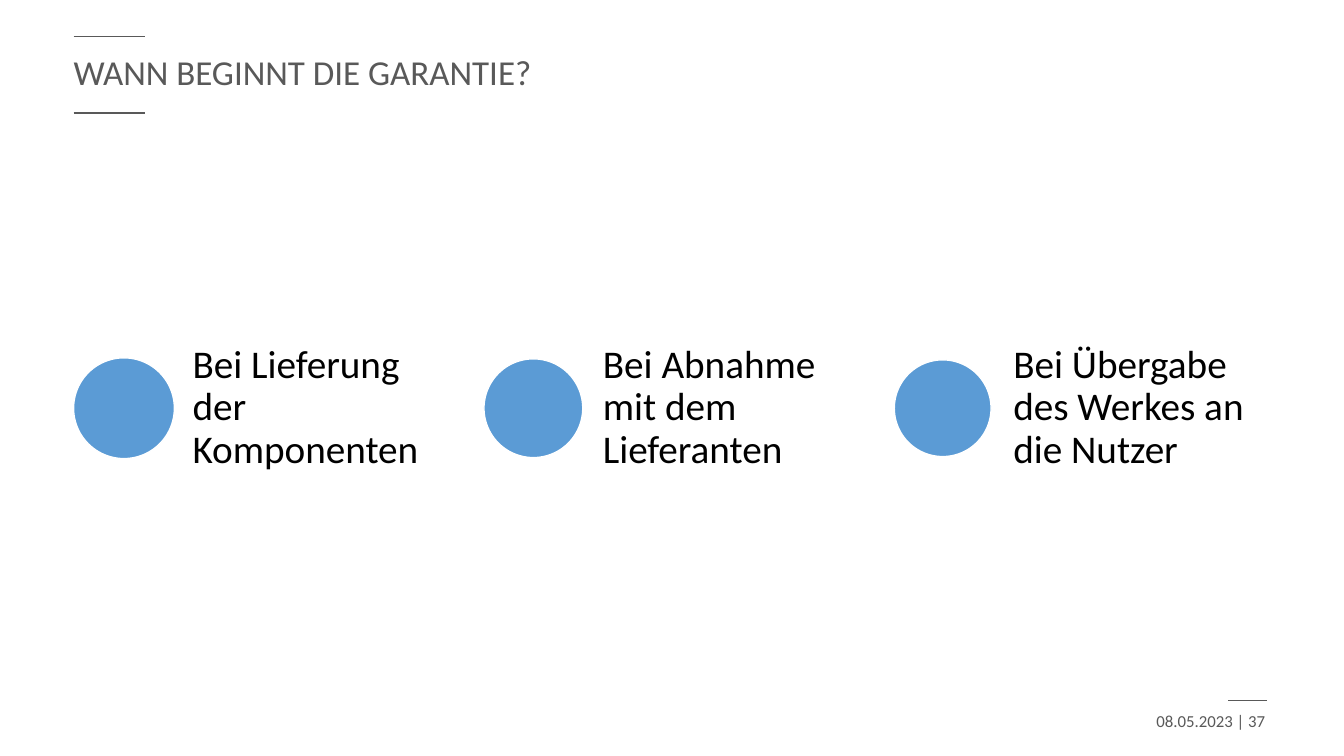
from pptx import Presentation
from pptx.dml.color import RGBColor
from pptx.enum.shapes import MSO_CONNECTOR as Connector, MSO_SHAPE as Shape
from pptx.enum.text import MSO_ANCHOR as Anchor, MSO_AUTO_SIZE as AutoSize, PP_ALIGN as Align
from pptx.oxml.ns import qn
from pptx.util import Inches, Pt
from lxml import etree

COLORS = {"gray": "595959", "blue": "5B9BD5", "white": "FFFFFF", "black": "000000"}
ANSWERS = [
    ("Bei Lieferung der Komponenten", 1.0, 2.63),
    ("Bei Abnahme mit dem Lieferanten", 0.98, 2.63),
    ("Bei Übergabe des Werkes an die Nutzer", 0.96, 2.59),
]
LEFT = 0.73
PITCH = 4.07
MIDDLE = 4.05
TEXT_OFFSET = 1.06
TEXT_HEIGHT = 1.5


def color(name):
    return RGBColor.from_string(COLORS[name])


def apply_format(target, values):
    for name, value in values.items():
        setattr(target, name, value)


class SlideBuilder:
    font_name = "Calibri"

    def __init__(self, presentation):
        self.slide = presentation.slides.add_slide(presentation.slide_layouts[5])

    def fill_text(self, shape, text, size, color_name,
                  align=Align.LEFT, spacing=1.0, inset=(0.1, 0.05)):
        horizontal, vertical = map(Inches, inset)
        frame = shape.text_frame
        frame.text = text
        apply_format(frame, {
            "word_wrap": True, "auto_size": AutoSize.NONE, "vertical_anchor": Anchor.MIDDLE,
            "margin_left": horizontal, "margin_right": horizontal,
            "margin_top": vertical, "margin_bottom": vertical,
        })
        paragraph = frame.paragraphs[0]
        apply_format(paragraph, {
            "alignment": align, "line_spacing": spacing, "space_before": Pt(0),
        })
        font = paragraph.runs[0].font
        apply_format(font, {"name": self.font_name, "size": Pt(size)})
        font.color.rgb = color(color_name)

    def title(self, text, left, top, width, height):
        shape = self.slide.shapes.title
        apply_format(shape, {
            "left": Inches(left), "top": Inches(top),
            "width": Inches(width), "height": Inches(height),
        })
        self.fill_text(shape, text, 25, "gray", spacing=0.9)

    def text(self, text, left, top, width, height, size, color_name, **style):
        box = self.slide.shapes.add_textbox(*map(Inches, (left, top, width, height)))
        self.fill_text(box, text, size, color_name, **style)

    def rule(self, left, right, y):
        line = self.slide.shapes.add_connector(
            Connector.STRAIGHT, *map(Inches, (left, y, right, y)))
        line.line.color.rgb = color("gray")
        line.line.width = Pt(1)
        etree.SubElement(line._element.spPr, qn("a:effectLst"))

    def circle(self, left, top, diameter):
        shape = self.slide.shapes.add_shape(
            Shape.OVAL, *map(Inches, (left, top, diameter, diameter)))
        shape.shadow.inherit = False
        shape.fill.solid()
        shape.fill.fore_color.rgb = color("blue")
        shape.line.color.rgb = color("white")
        shape.line.width = Pt(1)


def main():
    presentation = Presentation()
    apply_format(presentation, {"slide_width": Inches(13.33), "slide_height": Inches(7.5)})
    builder = SlideBuilder(presentation)

    builder.title("WANN BEGINNT DIE GARANTIE?", 0.63, 0.36, 10.01, 0.76)
    for y in (0.36, 1.12):
        builder.rule(LEFT, 1.44, y)

    for index, (answer, diameter, width) in enumerate(ANSWERS):
        left = LEFT + index * PITCH
        builder.circle(left, MIDDLE - diameter / 2, diameter)
        builder.text(answer, left + TEXT_OFFSET, MIDDLE - TEXT_HEIGHT / 2, width, TEXT_HEIGHT,
                     28, "black", spacing=0.9, inset=(0.12, 0.12))

    builder.rule(12.18, 12.57, 6.95)
    builder.text("08.05.2023 | 37", 9.65, 6.95, 3, 0.4, 12, "gray", align=Align.RIGHT)
    presentation.save("out.pptx")


if __name__ == "__main__":
    main()
